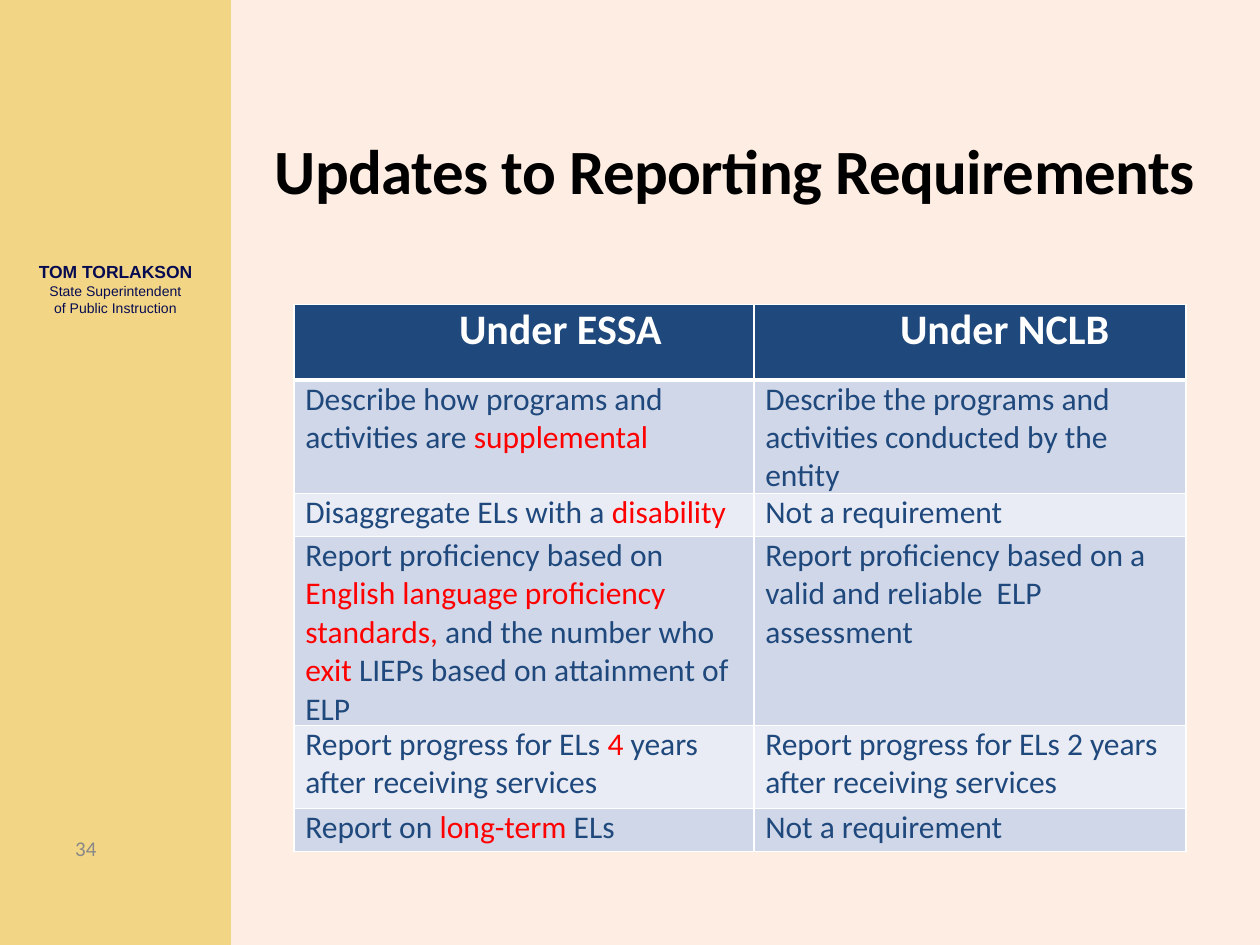
from lxml import etree
from pptx import Presentation
from pptx.dml.color import RGBColor
from pptx.enum import shapes, text
from pptx.oxml.ns import qn
from pptx.util import Pt

CREAM = RGBColor(0xFE, 0xED, 0xE2)
GOLD = RGBColor(0xF3, 0xD6, 0x85)
NAVY = RGBColor(0x07, 0x0C, 0x51)
BLUE = RGBColor(0x1F, 0x48, 0x7C)
RED = RGBColor(0xFF, 0x00, 0x00)
BLACK = RGBColor(0x00, 0x00, 0x00)
WHITE = RGBColor(0xFF, 0xFF, 0xFF)
GRAY = RGBColor(0x88, 0x88, 0x88)
BANDS = (RGBColor(0xD0, 0xD7, 0xE8), RGBColor(0xE9, 0xEC, 0xF4))

COLUMN_WIDTHS = (262.8, 247)
ROW_HEIGHTS = (43.2, 64.8, 24.5, 108, 47.5, 24.5)
HEADERS = (("Under ESSA", 94.3), ("Under NCLB", 83.5))
# In each cell the runs alternate: plain, highlighted, plain, ...
ROWS = (
    (("Describe how programs and activities are ", "supplemental"),
     ("Describe the programs and activities conducted by the entity",)),
    (("Disaggregate ELs with a ", "disability"),
     ("Not a requirement",)),
    (("Report proficiency based on ", "English language proficiency standards, ",
      "and the number who ", "exit ", "LIEPs based on attainment of ELP"),
     ("Report proficiency based on a valid and reliable  ELP assessment",)),
    (("Report progress for ELs ", "4 ", "years after receiving services"),
     ("Report progress for ELs 2 years after receiving services",)),
    (("Report on ", "long-term ", "ELs"),
     ("Not a requirement",)),
)


def set_font(font, name, size, color, bold=False):
    font.name = name
    font.size = Pt(size)
    font.bold = bold
    font.color.rgb = color


def set_margins(target, left=0, top=0):
    target.margin_left, target.margin_top = Pt(left), Pt(top)
    target.margin_right = target.margin_bottom = Pt(0)


def place(shape, left, top, width, height):
    shape.left, shape.top = Pt(left), Pt(top)
    shape.width, shape.height = Pt(width), Pt(height)


def add_title(slide, title):
    shape = slide.shapes.title
    place(shape, 150, 48, 540, 90)
    frame = shape.text_frame
    frame.text = title
    frame.word_wrap = True
    frame.auto_size = text.MSO_AUTO_SIZE.NONE
    frame.vertical_anchor = text.MSO_ANCHOR.MIDDLE
    set_margins(frame, top=8)
    paragraph = frame.paragraphs[0]
    paragraph.alignment = text.PP_ALIGN.CENTER
    set_font(paragraph.font, "Calibri", 36, BLACK, bold=True)
    # Slightly tightened letter spacing, in hundredths of a point
    paragraph.runs[0].font._element.set("spc", "-30")


def add_panel(slide, left, top, width, height, color):
    panel = slide.shapes.add_shape(
        shapes.MSO_SHAPE.RECTANGLE, Pt(left), Pt(top), Pt(width), Pt(height))
    panel.shadow.inherit = False
    panel.fill.solid()
    panel.fill.fore_color.rgb = color
    panel.line.fill.background()


def add_text(slide, left, top, width, height, lines, font_name, color, alignment, anchor):
    box = slide.shapes.add_textbox(Pt(left), Pt(top), Pt(width), Pt(height))
    frame = box.text_frame
    frame.word_wrap = True
    frame.vertical_anchor = anchor
    set_margins(frame)
    for index, (line, size, bold) in enumerate(lines):
        paragraph = frame.add_paragraph() if index else frame.paragraphs[0]
        paragraph.text = line
        paragraph.alignment = alignment
        set_font(paragraph.font, font_name, size, color, bold)


def set_borders(cell, top=1, bottom=1):
    properties = cell._tc.get_or_add_tcPr()
    for tag, width in (("a:lnL", 1), ("a:lnR", 1), ("a:lnT", top), ("a:lnB", bottom)):
        line = etree.SubElement(properties, qn(tag), w=str(Pt(width)))
        fill = etree.SubElement(line, qn("a:solidFill"))
        etree.SubElement(fill, qn("a:srgbClr"), val=str(WHITE))


def fill_cell(cell, runs, size, color, bold, background, indent):
    set_margins(cell, left=indent)
    cell.fill.solid()
    cell.fill.fore_color.rgb = background
    paragraph = cell.text_frame.paragraphs[0]
    set_font(paragraph.font, "Calibri", size, color, bold)
    for index, content in enumerate(runs):
        run = paragraph.add_run()
        run.text = content
        if index % 2:
            run.font.color.rgb = RED


def add_comparison(slide, left, top):
    table = slide.shapes.add_table(
        len(ROW_HEIGHTS), len(COLUMN_WIDTHS), Pt(left), Pt(top),
        Pt(sum(COLUMN_WIDTHS)), Pt(sum(ROW_HEIGHTS))).table
    for column, width in zip(table.columns, COLUMN_WIDTHS):
        column.width = Pt(width)
    for row, height in zip(table.rows, ROW_HEIGHTS):
        row.height = Pt(height)

    # Header row, with a heavier rule below
    for column, (header, indent) in enumerate(HEADERS):
        cell = table.cell(0, column)
        set_borders(cell, bottom=3)
        fill_cell(cell, (header,), 24, WHITE, True, BLUE, indent)

    # Banded body rows
    for index, contents in enumerate(ROWS):
        for column, runs in enumerate(contents):
            cell = table.cell(index + 1, column)
            set_borders(cell, top=1 if index else 3)
            fill_cell(cell, runs, 18, BLUE, False, BANDS[index % 2], 6.5)


def main():
    presentation = Presentation()
    presentation.slide_width, presentation.slide_height = Pt(720), Pt(540)
    slide = presentation.slides.add_slide(presentation.slide_layouts[5])

    # Background and side panel
    slide.background.fill.solid()
    slide.background.fill.fore_color.rgb = CREAM
    add_panel(slide, 0, 0, 132, 540, GOLD)

    # Title, name block and page number
    add_title(slide, "Updates to Reporting Requirements")
    add_text(slide, 6, 138, 120, 54,
             (("TOM TORLAKSON", 10, True),
              ("State Superintendent", 8, False),
              ("of Public Instruction", 8, False)),
             "Arial", NAVY, text.PP_ALIGN.CENTER, text.MSO_ANCHOR.MIDDLE)
    add_text(slide, 43, 477.5, 50, 44, (("34", 12, False),),
             "Calibri", GRAY, text.PP_ALIGN.LEFT, text.MSO_ANCHOR.TOP)

    # Comparison table
    add_comparison(slide, 168, 174)
    presentation.save("out.pptx")


if __name__ == "__main__":
    main()
